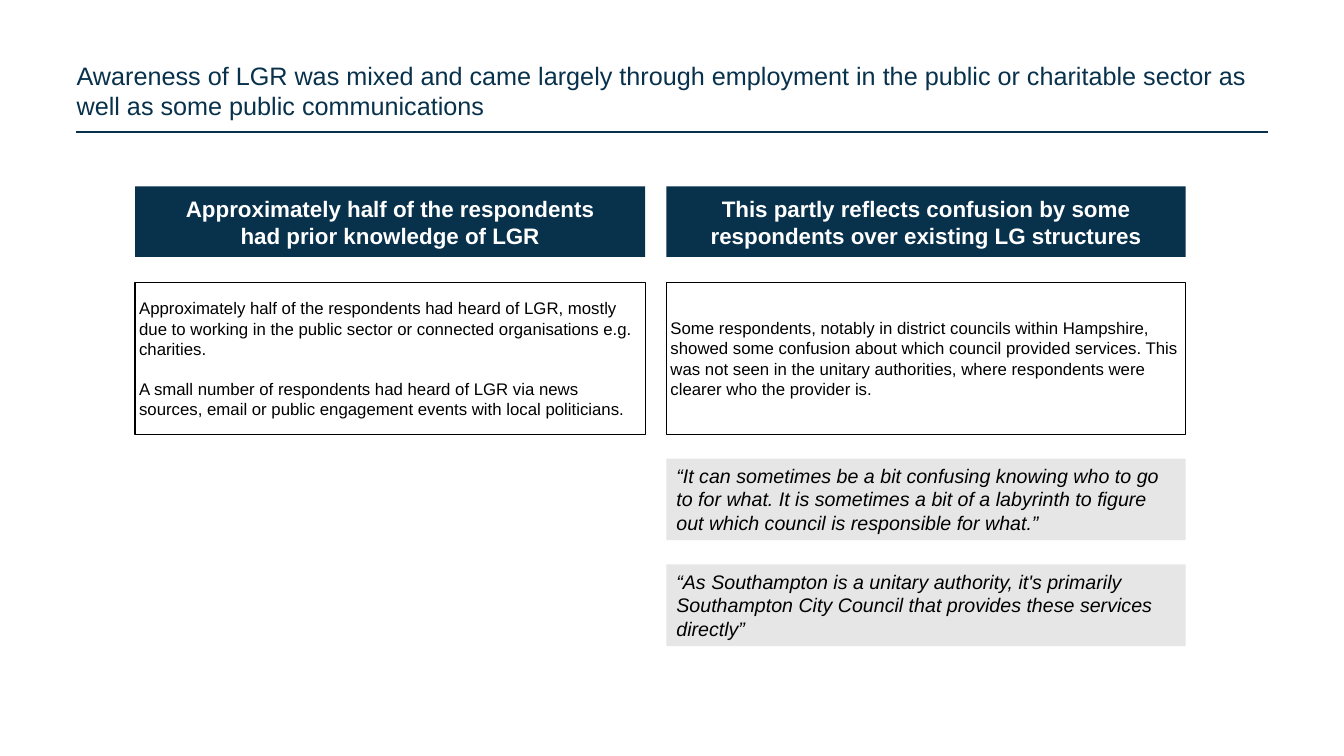
from lxml.etree import SubElement
from pptx import Presentation
from pptx.dml.color import RGBColor
from pptx.enum.shapes import MSO_CONNECTOR, MSO_SHAPE
from pptx.enum.text import MSO_ANCHOR, MSO_AUTO_SIZE, PP_ALIGN
from pptx.oxml.ns import qn
from pptx.util import Inches, Pt

NAVY, RULE_NAVY, BLACK, WHITE, GREY = "08314C", "08324B", "000000", "FFFFFF", "E7E6E6"

# Grid in inches: columns are (left, width), rows are (top, height)
AWARENESS, CONFUSION = (1.34, 5.06), (6.61, 5.15)
HEADING_ROW, FINDING_ROW = (1.85, 0.7), (2.8, 1.51)
QUOTE_TOP, QUOTE_HEIGHT, QUOTE_STEP = 4.55, 0.81, 1.05

FINDINGS = [
    (AWARENESS, "Approximately half of the respondents had prior knowledge of LGR",
     ["Approximately half of the respondents had heard of LGR, mostly due to working in "
      "the public sector or connected organisations e.g. charities.",
      "A small number of respondents had heard of LGR via news sources, email or public "
      "engagement events with local politicians."]),
    (CONFUSION, "This partly reflects confusion by some respondents over existing LG structures",
     ["Some respondents, notably in district councils within Hampshire, showed some "
      "confusion about which council provided services. This was not seen in the unitary "
      "authorities, where respondents were clearer who the provider is."]),
]
QUOTES = [
    "“It can sometimes be a bit confusing knowing who to go to for what. It is sometimes "
    "a bit of a labyrinth to figure out which council is responsible for what.”",
    "“As Southampton is a unitary authority, it's primarily Southampton City Council that "
    "provides these services directly”",
]


def colour(hex_code):
    return RGBColor.from_string(hex_code)


def write(frame, paragraphs, size, text_colour, insets, anchor,
          align=PP_ALIGN.LEFT, bold=False, italic=False):
    """Fill a text frame with evenly formatted paragraphs, a line apart."""
    frame.word_wrap = True
    frame.auto_size = MSO_AUTO_SIZE.NONE
    frame.vertical_anchor = anchor
    frame.margin_left = frame.margin_right = Inches(insets[0])
    frame.margin_top = frame.margin_bottom = Inches(insets[1])
    for index, text in enumerate(paragraphs):
        paragraph = frame.add_paragraph() if index else frame.paragraphs[0]
        paragraph.text = text
        paragraph.alignment = align
        paragraph.space_before = Pt(14 if index else 0)
        font = paragraph.font
        font.name, font.size = "Arial", Pt(size)
        font.bold, font.italic = bold, italic
        font.color.rgb = colour(text_colour)


def add_box(slide, column, row, fill, outline=None):
    (left, width), (top, height) = column, row
    box = slide.shapes.add_shape(MSO_SHAPE.RECTANGLE, Inches(left), Inches(top),
                                 Inches(width), Inches(height))
    box.shadow.inherit = False
    box.fill.solid()
    box.fill.fore_color.rgb = colour(fill)
    if outline:
        box.line.color.rgb = colour(outline)
        box.line.width = Pt(1)
    else:
        box.line.fill.background()
    return box.text_frame


def add_heading(slide, column, text):
    write(add_box(slide, column, HEADING_ROW, NAVY), [text], 16, WHITE,
          (0.39, 0.05), MSO_ANCHOR.MIDDLE, PP_ALIGN.CENTER, bold=True)


def add_finding(slide, column, paragraphs):
    write(add_box(slide, column, FINDING_ROW, WHITE, BLACK), paragraphs, 12, BLACK,
          (0.04, 0.04), MSO_ANCHOR.MIDDLE)


def add_quote(slide, index, text):
    row = (QUOTE_TOP + index * QUOTE_STEP, QUOTE_HEIGHT)
    write(add_box(slide, CONFUSION, row, GREY), [text], 14, BLACK,
          (0.1, 0.05), MSO_ANCHOR.TOP, italic=True)


def add_title(slide, text):
    title = slide.shapes.title
    title.left, title.top = Inches(0.76), Inches(0.6)
    title.width, title.height = Inches(11.89), Inches(0.61)
    write(title.text_frame, [text], 18, NAVY, (0, 0), MSO_ANCHOR.TOP)


def add_title_rule(slide):
    rule = slide.shapes.add_connector(MSO_CONNECTOR.STRAIGHT, Inches(0.75), Inches(1.31),
                                      Inches(12.58), Inches(1.31))
    rule.line.color.rgb = colour(RULE_NAVY)
    rule.line.width = Pt(1.25)
    SubElement(rule.element.spPr, qn("a:effectLst"))


def main():
    presentation = Presentation()
    presentation.slide_width, presentation.slide_height = Inches(13.33), Inches(7.5)
    slide = presentation.slides.add_slide(presentation.slide_layouts[5])

    # Headline
    add_title_rule(slide)
    add_title(slide, "Awareness of LGR was mixed and came largely through employment in the "
                     "public or charitable sector as well as some public communications")

    # Findings, one per column
    for column, heading, paragraphs in FINDINGS:
        add_heading(slide, column, heading)
        add_finding(slide, column, paragraphs)

    # Supporting quotes
    for index, quote in enumerate(QUOTES):
        add_quote(slide, index, quote)

    presentation.save("out.pptx")


if __name__ == "__main__":
    main()
